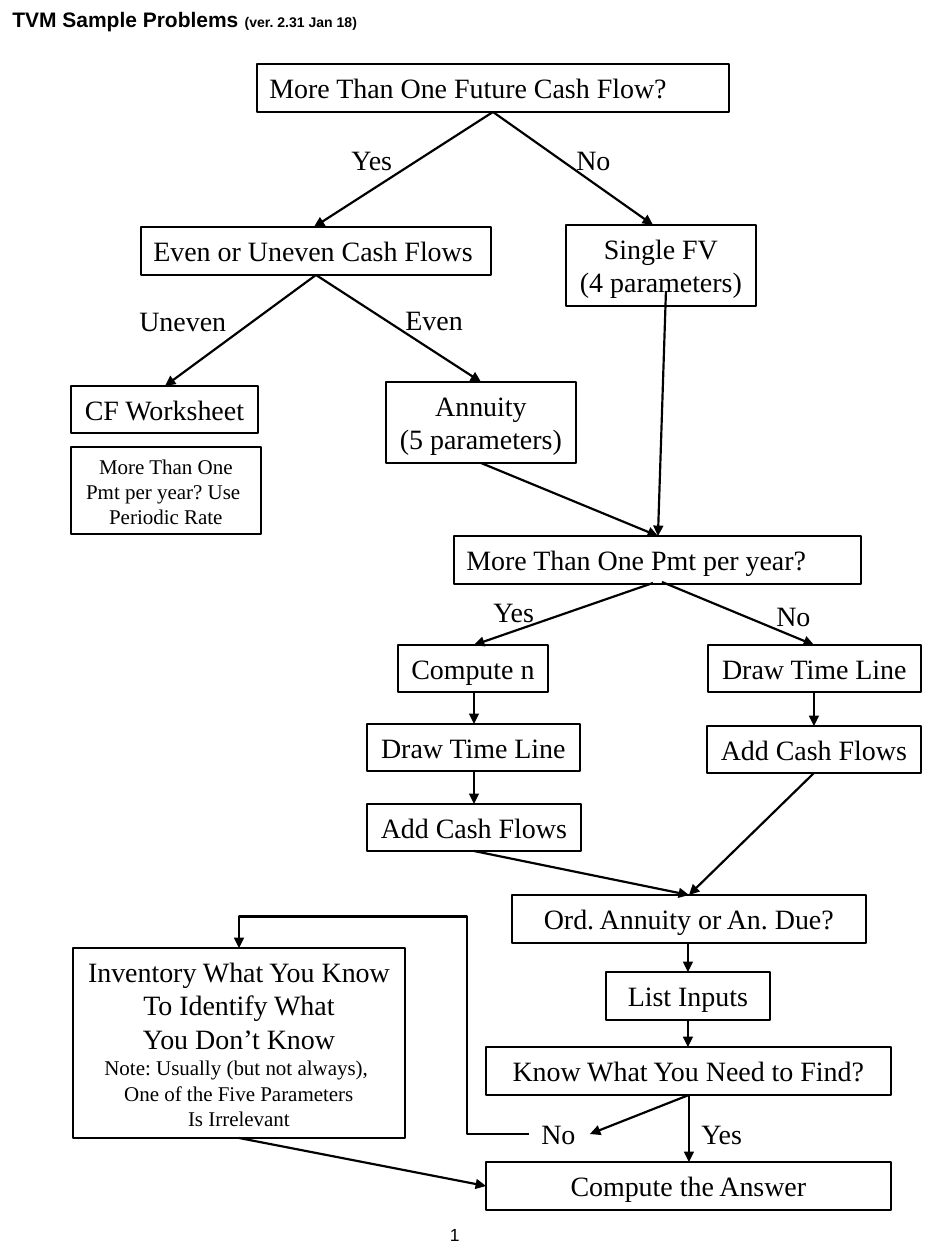
from dataclasses import dataclass
from typing import NamedTuple

import lxml.etree
import pptx
import pptx.dml.color
import pptx.enum.shapes
import pptx.enum.text
import pptx.oxml.ns
import pptx.util

EMU_PER_PX = 914400 / 126
ALIGN = pptx.enum.text.PP_ALIGN
AUTO_SIZE = pptx.enum.text.MSO_AUTO_SIZE


@dataclass(frozen=True)
class Theme:
    ink: pptx.dml.color.RGBColor = pptx.dml.color.RGBColor(0, 0, 0)
    heading_font: str = "Arial"
    body_font: str = "Times New Roman"
    title_size: int = 12
    version_size: int = 8
    number_size: int = 10
    body_size: int = 16
    note_size: int = 12
    box_line: float = 0.75
    arrow_line: float = 1.25


THEME = Theme()


class Run(NamedTuple):
    text: str
    size: int = THEME.body_size
    font: str = THEME.body_font
    bold: bool = False


class Box(NamedTuple):
    left: int
    top: int
    width: int
    height: int
    lines: tuple[str, ...]
    fits: bool = False  # the box hugs its unwrapped text
    align: ALIGN = ALIGN.CENTER
    notes: tuple[str, ...] = ()


class Label(NamedTuple):
    left: int
    top: int
    width: int
    text: str


class Arrow(NamedTuple):
    start: tuple[int, int]
    end: tuple[int, int]


# Flowchart steps
BOXES = (
    Box(257, 64, 472, 48, ("More Than One Future Cash Flow?",), align=ALIGN.LEFT),
    Box(141, 227, 350, 48, ("Even or Uneven Cash Flows",), align=ALIGN.LEFT),
    Box(566, 225, 190, 81, ("Single FV", "(4 parameters)"), fits=True),
    Box(71, 386, 187, 47, ("CF Worksheet",), fits=True),
    Box(386, 382, 190, 81, ("Annuity", "(5 parameters)"), fits=True),
    Box(71, 447, 190, 87, (), notes=("More Than One Pmt per year? Use ", "Periodic Rate")),
    Box(454, 536, 407, 48, ("More Than One Pmt per year?",), align=ALIGN.LEFT),
    Box(398, 645, 150, 47, ("Compute n",), fits=True),
    Box(367, 724, 213, 47, ("Draw Time Line",), fits=True),
    Box(367, 804, 214, 47, ("Add Cash Flows",), fits=True),
    Box(708, 645, 213, 47, ("Draw Time Line",), fits=True),
    Box(707, 726, 214, 47, ("Add Cash Flows",), fits=True),
    Box(512, 895, 354, 48, ("Ord. Annuity or An. Due?",)),
    Box(606, 972, 164, 48, ("List Inputs",)),
    Box(486, 1047, 405, 48, ("Know What You Need to Find?",)),
    Box(486, 1162, 405, 48, ("Compute the Answer",)),
    Box(73, 948, 332, 190,
        ("Inventory What You Know", "To Identify What", "You Don’t Know"), fits=True,
        notes=("Note: Usually (but not always), ", "One of the Five Parameters",
               "Is Irrelevant")),
)

# Answers beside the branches
LABEL_HEIGHT = 47
LABELS = (
    Label(339, 136, 67, "Yes"), Label(564, 136, 60, "No"),
    Label(127, 297, 113, "Uneven"), Label(393, 296, 83, "Even"),
    Label(481, 588, 67, "Yes"), Label(764, 592, 60, "No"),
    Label(689, 1110, 67, "Yes"), Label(529, 1110, 60, "No"),
)

ARROWS = (
    Arrow((493, 112), (314, 227)), Arrow((493, 112), (653, 225)),
    Arrow((316, 275), (165, 386)), Arrow((316, 275), (481, 382)),
    Arrow((481, 463), (658, 536)), Arrow((666, 291), (658, 536)),
    Arrow((653, 583), (474, 645)), Arrow((662, 582), (814, 645)),
    Arrow((474, 692), (474, 724)), Arrow((474, 770), (474, 804)),
    Arrow((814, 692), (814, 726)),
    Arrow((474, 851), (689, 895)), Arrow((814, 773), (689, 895)),
    Arrow((688, 944), (688, 972)), Arrow((688, 1020), (688, 1047)),
    Arrow((689, 1096), (689, 1162)), Arrow((689, 1095), (590, 1134)),
    Arrow((239, 1138), (486, 1186)),
)
LOOP_BACK = Arrow((529, 1134), (239, 948))
LOOP_BENDS = {"adj1": 21500, "adj2": 116900}


def px(length: int) -> pptx.util.Emu:
    return pptx.util.Emu(round(length * EMU_PER_PX))


def write(shape, paragraphs: list[list[Run]], align: ALIGN, fits: bool) -> None:
    frame = shape.text_frame
    frame.word_wrap = not fits
    frame.auto_size = AUTO_SIZE.SHAPE_TO_FIT_TEXT if fits else AUTO_SIZE.NONE
    frame.vertical_anchor = pptx.enum.text.MSO_ANCHOR.TOP
    for index, runs in enumerate(paragraphs):
        paragraph = frame.add_paragraph() if index else frame.paragraphs[0]
        paragraph.alignment = align
        for item in runs:
            run = paragraph.add_run()
            run.text = item.text
            run.font.size = pptx.util.Pt(item.size)
            run.font.name = item.font
            run.font.bold = item.bold
            run.font.color.rgb = THEME.ink


def add_text(slide, left: int, top: int, width: int, height: int, runs: list[Run],
             align: ALIGN = ALIGN.LEFT, fits: bool = False) -> None:
    shape = slide.shapes.add_textbox(px(left), px(top), px(width), px(height))
    write(shape, [runs], align, fits)


def add_box(slide, box: Box) -> None:
    shape = slide.shapes.add_shape(
        pptx.enum.shapes.MSO_SHAPE.RECTANGLE,
        px(box.left), px(box.top), px(box.width), px(box.height))
    shape.shadow.inherit = False
    shape.fill.background()
    shape.line.color.rgb = THEME.ink
    shape.line.width = pptx.util.Pt(THEME.box_line)
    paragraphs = [[Run(line)] for line in box.lines]
    paragraphs += [[Run(note, THEME.note_size)] for note in box.notes]
    write(shape, paragraphs, box.align, box.fits)


def add_arrow(slide, arrow: Arrow):
    connector = slide.shapes.add_connector(
        pptx.enum.shapes.MSO_CONNECTOR.STRAIGHT,
        *map(px, arrow.start), *map(px, arrow.end))
    connector.line.color.rgb = THEME.ink
    connector.line.width = pptx.util.Pt(THEME.arrow_line)
    qualified = pptx.oxml.ns.qn
    line = connector.line._get_or_add_ln()
    lxml.etree.SubElement(line, qualified("a:tailEnd"), type="triangle")
    lxml.etree.SubElement(connector._element.spPr, qualified("a:effectLst"))
    return connector


def add_loop_back(slide) -> None:
    properties = add_arrow(slide, LOOP_BACK)._element.spPr
    qualified = pptx.oxml.ns.qn
    # A half turn takes the place of the two flips
    transform = properties.find(qualified("a:xfrm"))
    for flip in ("flipH", "flipV"):
        transform.attrib.pop(flip, None)
    transform.set("rot", "10800000")
    geometry = properties.find(qualified("a:prstGeom"))
    geometry.set("prst", "bentConnector4")
    guides = geometry.find(qualified("a:avLst"))
    for name, value in LOOP_BENDS.items():
        lxml.etree.SubElement(guides, qualified("a:gd"), name=name, fmla=f"val {value}")


def main() -> None:
    presentation = pptx.Presentation()
    presentation.slide_width, presentation.slide_height = px(945), px(1260)
    slide = presentation.slides.add_slide(presentation.slide_layouts[6])

    # Title and page number
    add_text(slide, 0, 0, 435, 32, [
        Run("TVM Sample Problems ", THEME.title_size, THEME.heading_font, True),
        Run("(ver. 2.31 Jan 18)", THEME.version_size, THEME.heading_font, True)])
    add_text(slide, 409, 1218, 63, 42,
             [Run("1", THEME.number_size, THEME.heading_font)], ALIGN.RIGHT)

    # Flowchart
    for box in BOXES:
        add_box(slide, box)
    for arrow in ARROWS:
        add_arrow(slide, arrow)
    add_loop_back(slide)
    for label in LABELS:
        add_text(slide, label.left, label.top, label.width, LABEL_HEIGHT,
                 [Run(label.text)], fits=True)

    presentation.save("out.pptx")


if __name__ == "__main__":
    main()
